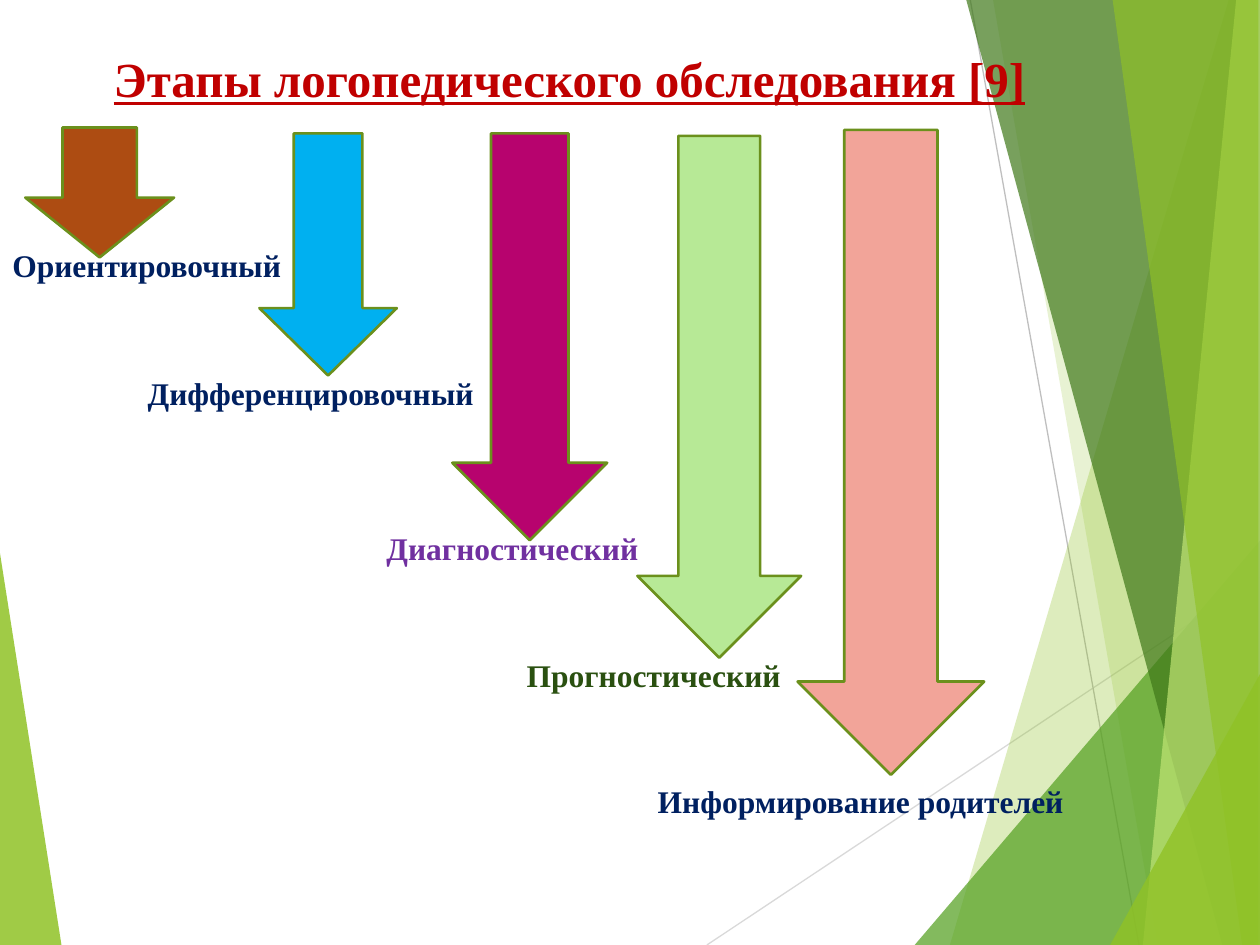
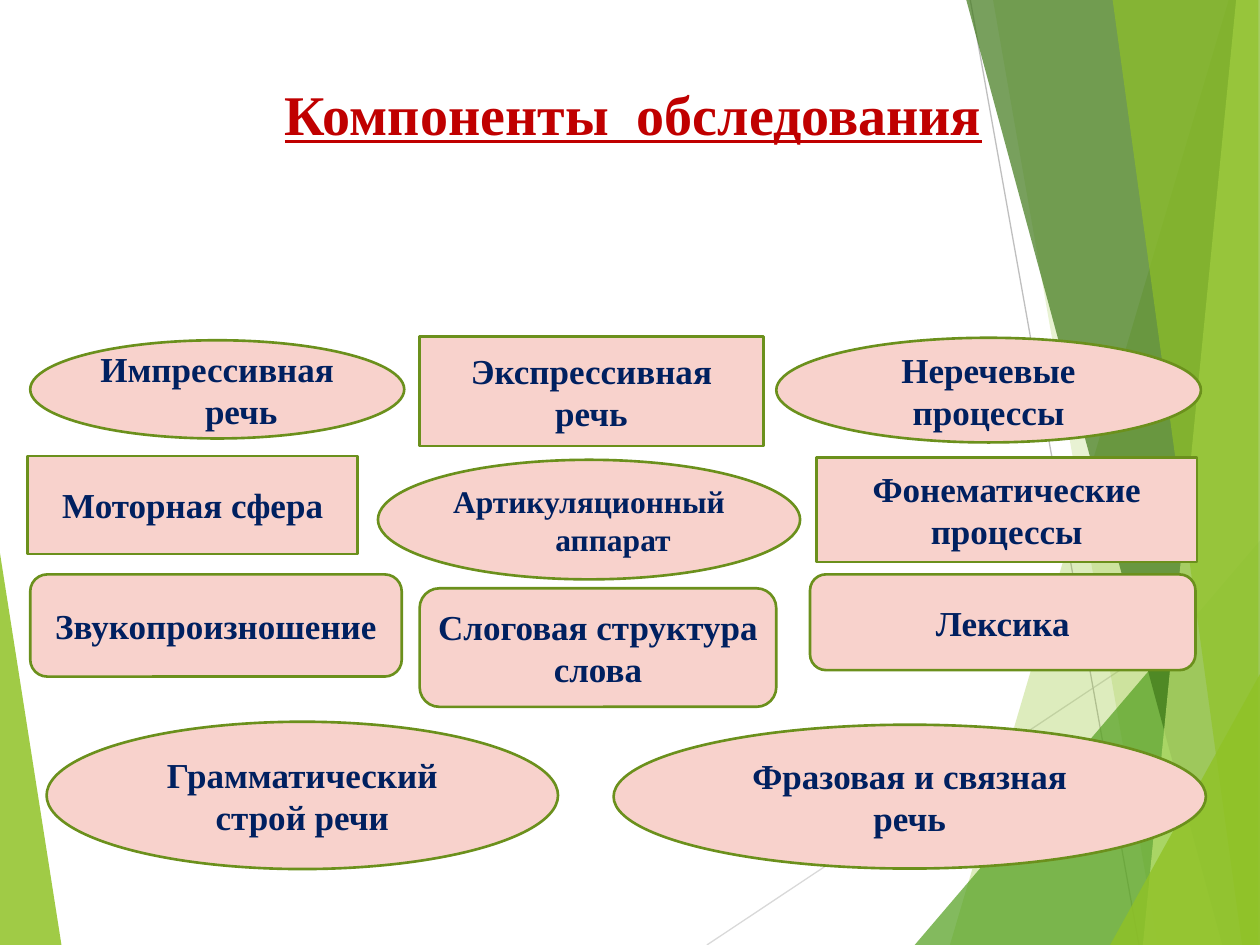
import lxml.etree
import pptx
import pptx.util
import pptx.dml.color
import pptx.enum.shapes
import pptx.enum.text
import pptx.oxml.ns

Cm = pptx.util.Cm
Pt = pptx.util.Pt
qn = pptx.oxml.ns.qn
SHAPE = pptx.enum.shapes.MSO_SHAPE
ALIGN = pptx.enum.text.PP_ALIGN
ANCHOR = pptx.enum.text.MSO_ANCHOR

W, H = 25.4, 19.05
FONT = "Times New Roman"
RED, NAVY, PINK, OUTLINE = "C00000", "002060", "F8D2CC", "6B901C"
LABEL_HEIGHT = 1.02
HANGING = 0.97

RAYS = [
    ("D9D9D9", (14.25, H), (W, 11.63)),
    ("BFBFBF", (19.56, 0), (22.96, H)),
]
WEDGES = [
    ("90C226", 85, (0, 11.15), (1.24, H), 0),
    ("90C226", 30, (24.77, 0), (19.15, H), W),
    ("90C226", 20, (20.02, 0), (23.34, H), W),
    ("54A021", 72, (18.44, H), (W, 10.9), W),
    ("3F7819", 70, (19.48, 0), (24.64, H), W),
    ("C0E474", 70, (24.92, 0), (23.04, H), W),
    ("90C226", 65, (22.43, 0), (25.04, H), 25.37),
    ("90C226", 80, (22.38, H), (W, 13.59), W),
]

STAGES_TITLE = ("Этапы логопедического обследования [9]", 28, (1.14, 0.86, 20.68, 5.56))
STAGES = [
    ("Ориентировочный", NAVY, ALIGN.LEFT, (0, 4.83, 6.1),
     "AD4C12", (0.51, 2.57, 3, 2.62), 0.46),
    ("Дифференцировочный", NAVY, ALIGN.CENTER, (2.72, 7.42, 7.09),
     "00B0F0", (5.23, 2.69, 2.77, 4.88), 0.49),
    ("Диагностический", "7030A0", ALIGN.CENTER, (6.2, 10.54, 8.26),
     "B7036E", (9.12, 2.69, 3.12, 8.2), 0.5),
    ("Прогностический", "2A5010", ALIGN.CENTER, (8.53, 13.11, 9.3),
     "B7E996", (12.85, 2.74, 3.3, 10.52), 0.5),
    ("Информирование родителей", NAVY, ALIGN.CENTER, (12.12, 15.65, 10.46),
     "F2A499", (16.08, 2.62, 3.76, 13), 0.5),
]

PARTS_TITLE = ("Компоненты  обследования", 32, (1.85, 1.47, 21.84, 4.01))
OVAL, RECT, ROUND = SHAPE.OVAL, SHAPE.RECTANGLE, SHAPE.ROUNDED_RECTANGLE
PARTS = [
    ("Импрессивная речь", OVAL, (0.61, 6.86, 7.54, 1.98), 20, HANGING),
    ("Экспрессивная речь", RECT, (8.46, 6.78, 6.93, 2.21), 20, 0),
    ("Неречевые процессы", OVAL, (15.65, 6.81, 8.56, 2.11), 20, 0),
    ("Моторная сфера", RECT, (0.56, 9.19, 6.65, 1.98), 20, 0),
    ("Артикуляционный аппарат", OVAL, (7.62, 9.27, 8.51, 2.41), 18, HANGING),
    ("Фонематические процессы", RECT, (16.46, 9.22, 7.67, 2.11), 20, 0),
    ("Звукопроизношение", ROUND, (0.61, 11.58, 7.49, 2.06), 20, 0),
    ("Слоговая структура слова", ROUND, (8.46, 11.86, 7.19, 2.39), 20, 0),
    ("Лексика", ROUND, (16.33, 11.58, 7.77, 1.93), 20, 0),
    ("Грамматический строй речи", OVAL, (0.94, 14.55, 10.31, 2.97), 20, 0),
    ("Фразовая и связная речь", OVAL, (12.37, 14.61, 11.94, 2.9), 20, 0),
]


def rgb(value):
    return pptx.dml.color.RGBColor.from_string(value)


def cm(values):
    return [Cm(v) for v in values]


def write(tf, text, size, color, align=ALIGN.CENTER, anchor=ANCHOR.TOP):
    tf.word_wrap = True
    tf.auto_size = pptx.enum.text.MSO_AUTO_SIZE.NONE
    tf.vertical_anchor = anchor
    p = tf.paragraphs[0]
    p.text = text
    p.alignment = align
    p.font.name = FONT
    p.font.size = Pt(size)
    p.font.bold = True
    p.font.color.rgb = rgb(color)
    return p


def add_outlined(s, kind, box, fill):
    sp = s.shapes.add_shape(kind, *cm(box))
    sp.shadow.inherit = False
    sp.fill.solid()
    sp.fill.fore_color.rgb = rgb(fill)
    sp.line.color.rgb = rgb(OUTLINE)
    sp.line.width = Pt(1.5)
    return sp


def add_ray(s, color, start, end):
    line = s.shapes.add_connector(
        pptx.enum.shapes.MSO_CONNECTOR.STRAIGHT, *cm(start + end))
    line.line.color.rgb = rgb(color)
    line.line.width = Pt(0.75)
    lxml.etree.SubElement(line.element.spPr, qn("a:effectLst"))
    return line


def add_wedge(s, color, opacity, start, end, edge):
    builder = s.shapes.build_freeform(*cm(start))
    corners = [end, (edge, end[1]), (edge, start[1])]
    builder.add_line_segments([cm(c) for c in corners], close=True)
    sp = builder.convert_to_shape()
    sp.shadow.inherit = False
    sp.line.fill.background()
    sp.fill.solid()
    sp.fill.fore_color.rgb = rgb(color)
    fill = sp.element.spPr.find(".//" + qn("a:srgbClr"))
    lxml.etree.SubElement(fill, qn("a:alpha"), val=str(opacity * 1000))
    return sp


def decorate_layout(layout, s):
    decor = [add_ray(s, *ray) for ray in RAYS]
    decor += [add_wedge(s, *wedge) for wedge in WEDGES]
    for number, sp in enumerate(decor, 100):
        sp.element.xpath(".//p:cNvPr")[0].set("id", str(number))
        layout.shapes.element.append(sp.element)


def add_title(s, text, size, box):
    sp = s.shapes.title
    sp.left, sp.top, sp.width, sp.height = cm(box)
    write(sp.text_frame, text, size, RED).font.underline = True


def build_stages(s):
    add_title(s, *STAGES_TITLE)
    for text, color, align, place, fill, arrow, head in STAGES:
        sp = add_outlined(s, SHAPE.DOWN_ARROW, arrow, fill)
        sp.adjustments[1] = head
        label = s.shapes.add_textbox(*cm(place + (LABEL_HEIGHT,)))
        write(label.text_frame, text, 18, color, align)


def build_parts(s):
    add_title(s, *PARTS_TITLE)
    for text, kind, box, size, indent in PARTS:
        sp = add_outlined(s, kind, box, PINK)
        p = write(sp.text_frame, text, size, NAVY, anchor=ANCHOR.MIDDLE)
        if indent:
            pPr = p._p.get_or_add_pPr()
            pPr.set("marL", str(Cm(indent)))
            pPr.set("indent", str(-Cm(indent)))


def main():
    prs = pptx.Presentation()
    prs.slide_width, prs.slide_height = Cm(W), Cm(H)
    layout = prs.slide_layouts[5]
    stages, parts = [prs.slides.add_slide(layout) for _ in range(2)]
    decorate_layout(layout, stages)
    build_stages(stages)
    build_parts(parts)
    prs.save("out.pptx")


if __name__ == "__main__":
    main()
